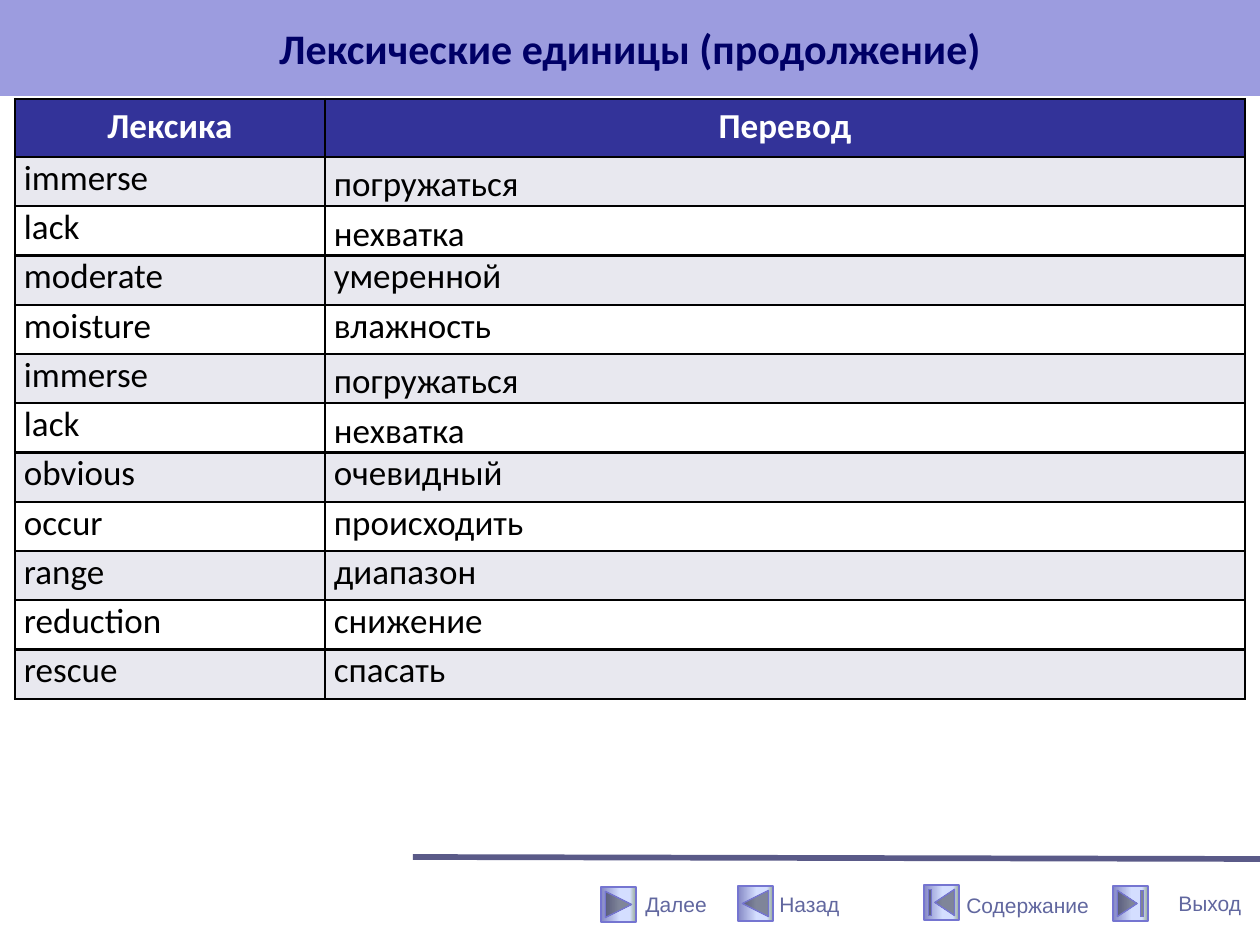
"""Build a vocabulary slide with a two-column table and a navigation bar."""
from lxml.etree import SubElement
from pptx import Presentation
from pptx.dml.color import RGBColor
from pptx.enum.shapes import MSO_CONNECTOR, MSO_SHAPE as Shape
from pptx.enum.text import MSO_ANCHOR as Anchor, MSO_AUTO_SIZE as AutoSize, PP_ALIGN as Align
from pptx.oxml.ns import qn
from pptx.util import Emu, Pt

BLACK = RGBColor(0x00, 0x00, 0x00)
WHITE = RGBColor(0xFF, 0xFF, 0xFF)
NAVY = RGBColor(0x00, 0x00, 0x66)
LAVENDER = RGBColor(0x9C, 0x9C, 0xDF)
INDIGO = RGBColor(0x33, 0x33, 0x99)
PALE = RGBColor(0xE8, 0xE8, 0xEF)
RULE = RGBColor(0x5A, 0x5A, 0x88)
BUTTON_EDGE = RGBColor(0x75, 0x75, 0xD1)
LABEL = RGBColor(0x61, 0x67, 0x9F)
STEEL = RGBColor(0x84, 0x88, 0xC4)
ICE = RGBColor(0xD4, 0xDE, 0xFF)
SAGE = RGBColor(0x96, 0xAB, 0x94)
GRADIENT = [(0, STEEL), (53, ICE), (83, ICE), (100, SAGE)]


def px(length):
    return Emu(round(length * 914400 / 126))


def write(para, text, color, **font):
    span = para.add_run()
    span.text = text
    span.font.color.rgb = color
    for name, value in font.items():
        setattr(span.font, name, value)


deck = Presentation()
deck.slide_width, deck.slide_height = px(1260), px(945)
page = deck.slides.add_slide(deck.slide_layouts[5])

rule = page.shapes.add_connector(MSO_CONNECTOR.STRAIGHT, px(413), px(857), px(1260), px(859))
rule.line.color.rgb = RULE
rule.line.width = Pt(3.25)
SubElement(rule._element.spPr, qn("a:effectLst"))

buttons = [
    (Shape.ACTION_BUTTON_END, 1113, 886, "Выход", (1166, 872, 94, 63),
     {"word_wrap": False, "vertical_anchor": Anchor.MIDDLE}),
    (Shape.ACTION_BUTTON_BEGINNING, 924, 885, "Содержание", (954, 886, 149, 38),
     {"word_wrap": True, "auto_size": AutoSize.SHAPE_TO_FIT_TEXT}),
    (Shape.ACTION_BUTTON_FORWARD_OR_NEXT, 601, 887, "Далее", (633, 885, 87, 38),
     {"word_wrap": False, "auto_size": AutoSize.SHAPE_TO_FIT_TEXT}),
    (Shape.ACTION_BUTTON_BACK_OR_PREVIOUS, 738, 886, "Назад", (767, 885, 86, 38),
     {"word_wrap": False, "auto_size": AutoSize.SHAPE_TO_FIT_TEXT}),
]
for kind, left, top, text, area, layout in buttons:
    button = page.shapes.add_shape(kind, px(left), px(top), px(35), px(35))
    button.shadow.inherit = False
    button.line.color.rgb = BUTTON_EDGE
    button.line.width = Pt(0.75)
    button.fill.gradient()
    button.fill.gradient_angle = 0
    stops = button._element.spPr.find(qn("a:gradFill")).find(qn("a:gsLst"))
    stops.clear()
    for percent, color in GRADIENT:
        stop = SubElement(stops, qn("a:gs"), pos=str(percent * 1000))
        SubElement(stop, qn("a:srgbClr"), val=str(color))

    box = page.shapes.add_textbox(*map(px, area))
    for name, value in layout.items():
        setattr(box.text_frame, name, value)
    write(box.text_frame.paragraphs[0], text, LABEL, name="Arial", size=Pt(12))

title = page.shapes.title
title.left, title.top, title.width, title.height = map(px, (0, 0, 1260, 96))
title.fill.solid()
title.fill.fore_color.rgb = LAVENDER
title.text_frame.vertical_anchor = Anchor.MIDDLE
heading = title.text_frame.paragraphs[0]
heading.alignment = Align.CENTER
write(heading, "Лексические единицы (продолжение)", NAVY, name="Calibri", size=Pt(24), bold=True)

words = [
    ("Лексика", "Перевод"),
    ("immerse", "погружаться"),
    ("lack", "нехватка"),
    ("moderate", "умеренной"),
    ("moisture", "влажность"),
    ("immerse", "погружаться"),
    ("lack", "нехватка"),
    ("obvious", "очевидный"),
    ("occur", "происходить"),
    ("range", "диапазон"),
    ("reduction", "снижение"),
    ("rescue", "спасать"),
]
table = page.shapes.add_table(len(words), 2, px(15), px(99), px(1230), px(600)).table
table.columns[0].width, table.columns[1].width = px(310), px(920)
for number, pair in enumerate(words):
    header = number == 0
    table.rows[number].height = px(58) if header else Emu(px(542) // (len(words) - 1))
    side, edge = (px(13), px(6)) if header else (px(9), 0)
    margins = {"margin_left": side, "margin_right": side, "margin_top": edge, "margin_bottom": edge}
    for column, text in enumerate(pair):
        cell = table.cell(number, column)
        for name, value in margins.items():
            setattr(cell, name, value)
        properties = cell._tc.get_or_add_tcPr()
        for border in ("a:lnL", "a:lnR", "a:lnT", "a:lnB"):
            line = SubElement(properties, qn(border), w=str(Pt(1.5)))
            SubElement(SubElement(line, qn("a:solidFill")), qn("a:srgbClr"), val=str(BLACK))
        cell.fill.solid()
        cell.fill.fore_color.rgb = INDIGO if header else PALE if number % 2 else WHITE
        para = cell.text_frame.paragraphs[0]
        para.alignment = Align.CENTER if header else Align.LEFT
        if text in ("погружаться", "нехватка"):
            para.alignment = Align.JUSTIFY
            para.line_spacing = 1.15
            indent = para._p.get_or_add_pPr()
            indent.set("marL", str(px(63)))
            indent.set("indent", str(-px(63)))
        write(para, text, WHITE if header else BLACK, name="Calibri", size=Pt(20), bold=header)

deck.save("out.pptx")
